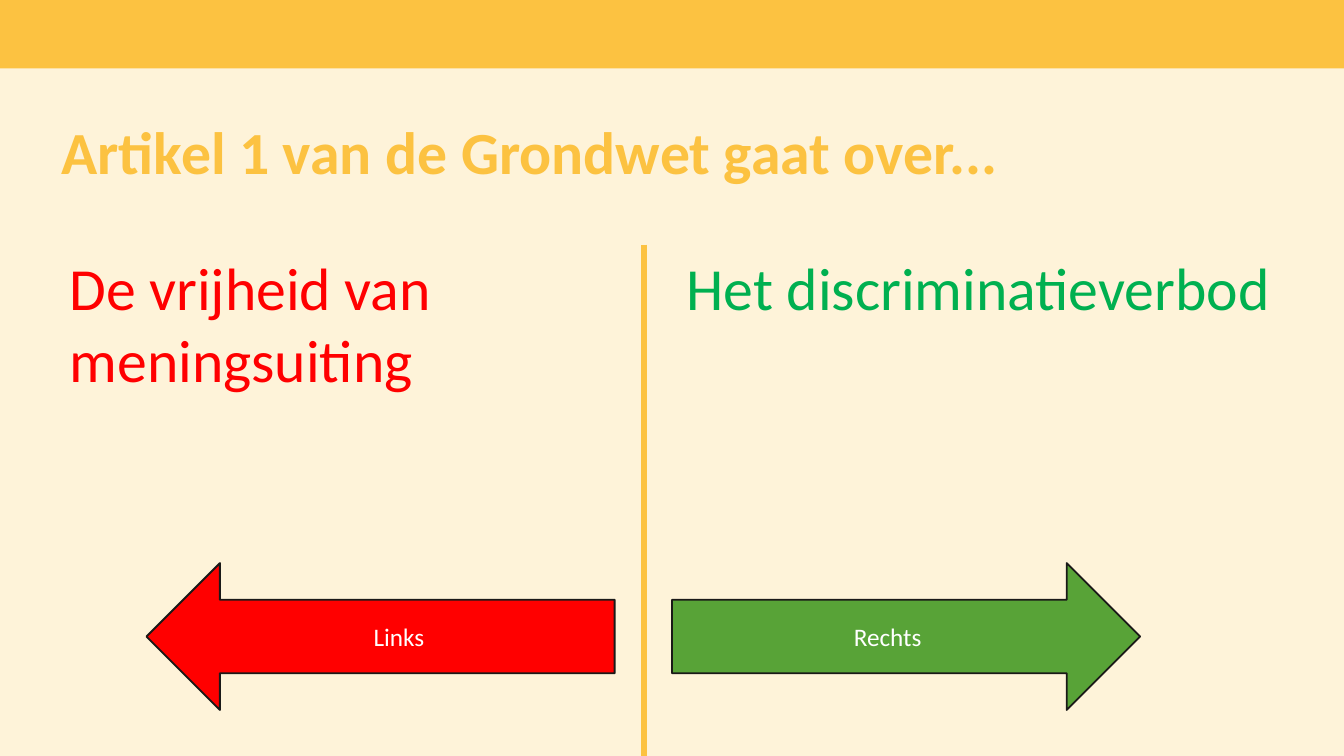
from pptx import Presentation
from pptx.dml.color import RGBColor as RGB
from pptx.enum.shapes import MSO_CONNECTOR as Link, MSO_SHAPE as Form
from pptx.enum.text import MSO_ANCHOR as Anchor, MSO_AUTO_SIZE as Fit, PP_ALIGN as Align
from pptx.oxml.ns import qn
from pptx.util import Pt
from lxml.etree import SubElement

WIDTH, HEIGHT = 720, 405
GOLD = RGB(0xFC, 0xC2, 0x41)
CREAM = RGB(0xFE, 0xF3, 0xD9)
RED = RGB(0xFF, 0x00, 0x00)
LIME = RGB(0x00, 0xB0, 0x50)
GREEN = RGB(0x58, 0xA3, 0x37)
INK = RGB(0x1A, 0x19, 0x18)
WHITE = RGB(0xFF, 0xFF, 0xFF)


class Page:
    face = "Calibri"
    large, small = 32, 13.5

    def __init__(self, deck):
        self.slide = deck.slides.add_slide(deck.slide_layouts[5])
        self.shapes = self.slide.shapes
        fill = self.slide.background.fill
        fill.solid()
        fill.fore_color.rgb = CREAM

    def label(self, frame, text, size, color, align=Align.LEFT, bold=False):
        frame.text = text
        frame.word_wrap = True
        para = frame.paragraphs[0]
        para.alignment = align
        font = para.runs[0].font
        font.name, font.size, font.bold = self.face, Pt(size), bold
        font.color.rgb = color
        return para

    def title(self, text, *box):
        item = self.shapes.title
        item.left, item.top, item.width, item.height = map(Pt, box)
        frame = item.text_frame
        frame.margin_left = frame.margin_right = frame.margin_bottom = 0
        frame.margin_top = Pt(3.6)
        frame.vertical_anchor = Anchor.TOP
        frame.auto_size = Fit.NONE
        para = self.label(frame, text, self.large, GOLD, bold=True)
        para.line_spacing = Pt(36)

    def shape(self, form, fill, *box):
        item = self.shapes.add_shape(form, *map(Pt, box))
        item.shadow.inherit = False
        item.fill.solid()
        item.fill.fore_color.rgb = fill
        item.line.fill.background()
        return item

    def arrow(self, form, text, fill, *box):
        item = self.shape(form, fill, *box)
        item.line.color.rgb = INK
        item.line.width = Pt(1)
        item.text_frame.vertical_anchor = Anchor.MIDDLE
        self.label(item.text_frame, text, self.small, WHITE, Align.CENTER)

    def text(self, text, color, *box):
        frame = self.shapes.add_textbox(*map(Pt, box)).text_frame
        self.label(frame, text, self.large, color)
        frame.auto_size = Fit.SHAPE_TO_FIT_TEXT

    def line(self, *ends):
        item = self.shapes.add_connector(Link.STRAIGHT, *map(Pt, ends))
        item.line.color.rgb = GOLD
        item.line.width = Pt(3)
        SubElement(item._element.spPr, qn("a:effectLst"))


def main():
    deck = Presentation()
    deck.slide_width, deck.slide_height = Pt(WIDTH), Pt(HEIGHT)
    page = Page(deck)

    # Top band and question
    page.shape(Form.RECTANGLE, GOLD, 0, 0, WIDTH, 36.7)
    page.title("Artikel 1 van de Grondwet gaat over...", 33, 60.5, 715, 70.5)

    # Divider and the two answers
    top = 131
    page.line(345, top, 345, HEIGHT)
    page.text("De vrijheid van meningsuiting", RED, 30.2, top, 345, 85)
    page.text("Het discriminatieverbod", LIME, 360.7, top, 350, 46)

    # Arrows for choosing a side
    row, wide, high = 301.7, 250.8, 78.7
    page.arrow(Form.LEFT_ARROW, "Links", RED, 78.5, row, wide, high)
    page.arrow(Form.RIGHT_ARROW, "Rechts", GREEN, 360, row, wide, high)

    deck.save("out.pptx")


if __name__ == "__main__":
    main()
